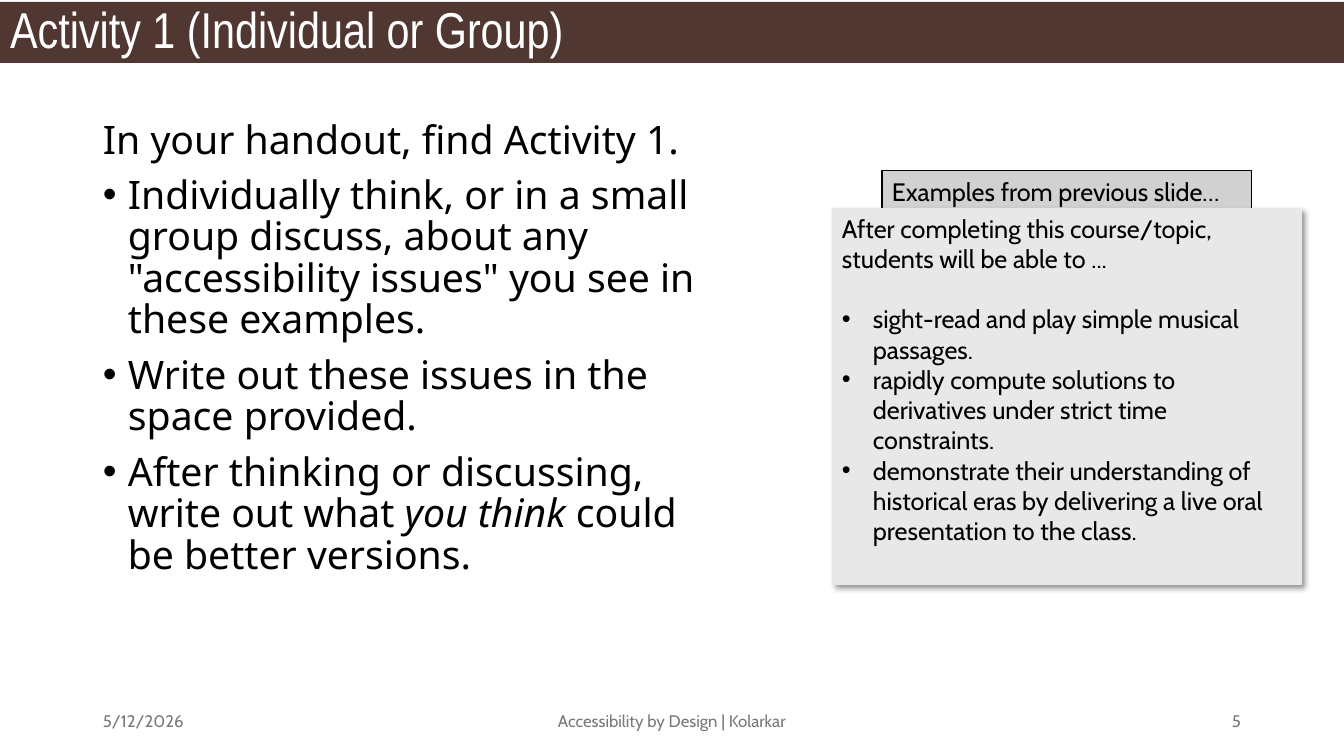
from dataclasses import dataclass

from lxml import etree
from pptx import Presentation
from pptx import util as u
from pptx.dml.color import RGBColor
from pptx.enum import shapes, text
from pptx.oxml import ns


@dataclass(frozen=True)
class Theme:
    brown: str = "503732"
    white: str = "FFFFFF"
    black: str = "000000"
    gray: str = "797979"
    tab: str = "D1D1D1"
    card: str = "E8E8E8"
    head: str = "Arial Narrow"
    body: str = "Noto Sans"
    note: str = "Cabin"
    big: int = 36
    main: int = 28
    mid: int = 18
    small: int = 12


T = Theme()
ALIGN = text.PP_ALIGN
ANCHOR = text.MSO_ANCHOR


def px(n):
    return u.Emu(round(n * 914400 / 100.8))


def place(shape, left, top, width, height):
    shape.left, shape.top = px(left), px(top)
    shape.width, shape.height = px(width), px(height)


def paint(shape, color):
    shape.fill.solid()
    shape.fill.fore_color.rgb = RGBColor.from_string(color)


def style(para, face, size, color, align=ALIGN.LEFT):
    para.alignment = align
    para.font.name = face
    para.font.size = u.Pt(size)
    para.font.color.rgb = RGBColor.from_string(color)


def bullet(para, indent):
    props = para._p.get_or_add_pPr()
    props.set("marL", str(px(indent)))
    props.set("indent", str(-px(indent)))
    etree.SubElement(props, ns.qn("a:buFont")).set("typeface", "Arial")
    etree.SubElement(props, ns.qn("a:buChar")).set("char", "•")


def setup(shape, anchor=ANCHOR.TOP):
    frame = shape.text_frame
    frame.word_wrap = True
    frame.auto_size = text.MSO_AUTO_SIZE.NONE
    frame.vertical_anchor = anchor
    return frame


def outline(frame, intro, points, indent, face, size):
    frame.text = "\n".join([intro, *points])
    for para in frame.paragraphs[1:]:
        bullet(para, indent)
    for para in frame.paragraphs:
        style(para, face, size, T.black)


def title(slide, words):
    shape = slide.shapes.title
    place(shape, 0, 2, 1344, 61)
    paint(shape, T.brown)
    frame = setup(shape, ANCHOR.MIDDLE)
    frame.text = words
    para = frame.paragraphs[0]
    para.line_spacing = 0.9
    style(para, T.head, T.big, T.white)


def label(slide, words, left, width, align):
    shape = slide.shapes.add_textbox(px(left), px(701), px(width), px(40))
    frame = setup(shape, ANCHOR.MIDDLE)
    frame.text = words
    style(frame.paragraphs[0], T.note, T.small, T.gray, align)


def panel(slide, box, color):
    kind = shapes.MSO_SHAPE.RECTANGLE
    shape = slide.shapes.add_shape(kind, *map(px, box))
    shape.shadow.inherit = False
    paint(shape, color)
    shape.line.fill.background()
    return shape


def shade(shape):
    effects = shape._element.spPr.find(ns.qn("a:effectLst"))
    outer = etree.SubElement(effects, ns.qn("a:outerShdw"))
    values = {"blurRad": u.Pt(4), "dist": u.Pt(3), "dir": 45 * 60000}
    for name, value in values.items():
        outer.set(name, str(value))
    outer.set("algn", "tl")
    color = etree.SubElement(outer, ns.qn("a:srgbClr"))
    color.set("val", T.black)
    etree.SubElement(color, ns.qn("a:alpha")).set("val", "40000")


def tasks(slide):
    shape = slide.shapes.add_textbox(*map(px, (93, 116, 645, 565)))
    frame = setup(shape)
    outline(frame, "In your handout, find Activity 1.", [
        'Individually think, or in a small group discuss, about any '
        '"accessibility issues" you see in these examples.',
        "Write out these issues in the space provided.",
        "After thinking or discussing, write out what ",
    ], 25, T.body, T.main)
    for para in frame.paragraphs:
        para.line_spacing = 0.88
    for para in frame.paragraphs[1:]:
        para.space_before = u.Pt(10)
    last = frame.paragraphs[-1]
    stress = last.add_run()
    stress.text = "you think"
    stress.font.italic = True
    last.add_run().text = " could be better versions."


def samples(slide):
    tab = panel(slide, (882, 171, 370, 40), T.tab)
    tab.line.color.rgb = RGBColor.from_string(T.black)
    tab.line.width = u.Pt(0.75)
    frame = setup(tab)
    frame.text = "Examples from previous slide…"
    style(frame.paragraphs[0], T.note, T.mid, T.black)

    card = panel(slide, (832, 208, 470, 377), T.card)
    shade(card)
    frame = setup(card)
    outline(
        frame,
        "After completing this course/topic, students will be able to ...",
        [
            "sight-read and play simple musical passages.",
            "rapidly compute solutions to derivatives under strict time "
            "constraints.",
            "demonstrate their understanding of historical eras by "
            "delivering a live oral presentation to the class.",
        ], 31, T.note, T.mid)
    frame.paragraphs[1].space_before = u.Pt(21.6)


def main():
    deck = Presentation()
    deck.slide_width, deck.slide_height = px(1344), px(756)
    slide = deck.slides.add_slide(deck.slide_layouts[5])
    title(slide, "Activity 1 (Individual or Group)")
    tasks(slide)
    label(slide, "5/12/2026", 93, 302, ALIGN.LEFT)
    label(slide, "Accessibility by Design | Kolarkar", 445, 454, ALIGN.CENTER)
    label(slide, "5", 949, 302, ALIGN.RIGHT)
    samples(slide)
    deck.save("out.pptx")


if __name__ == "__main__":
    main()
